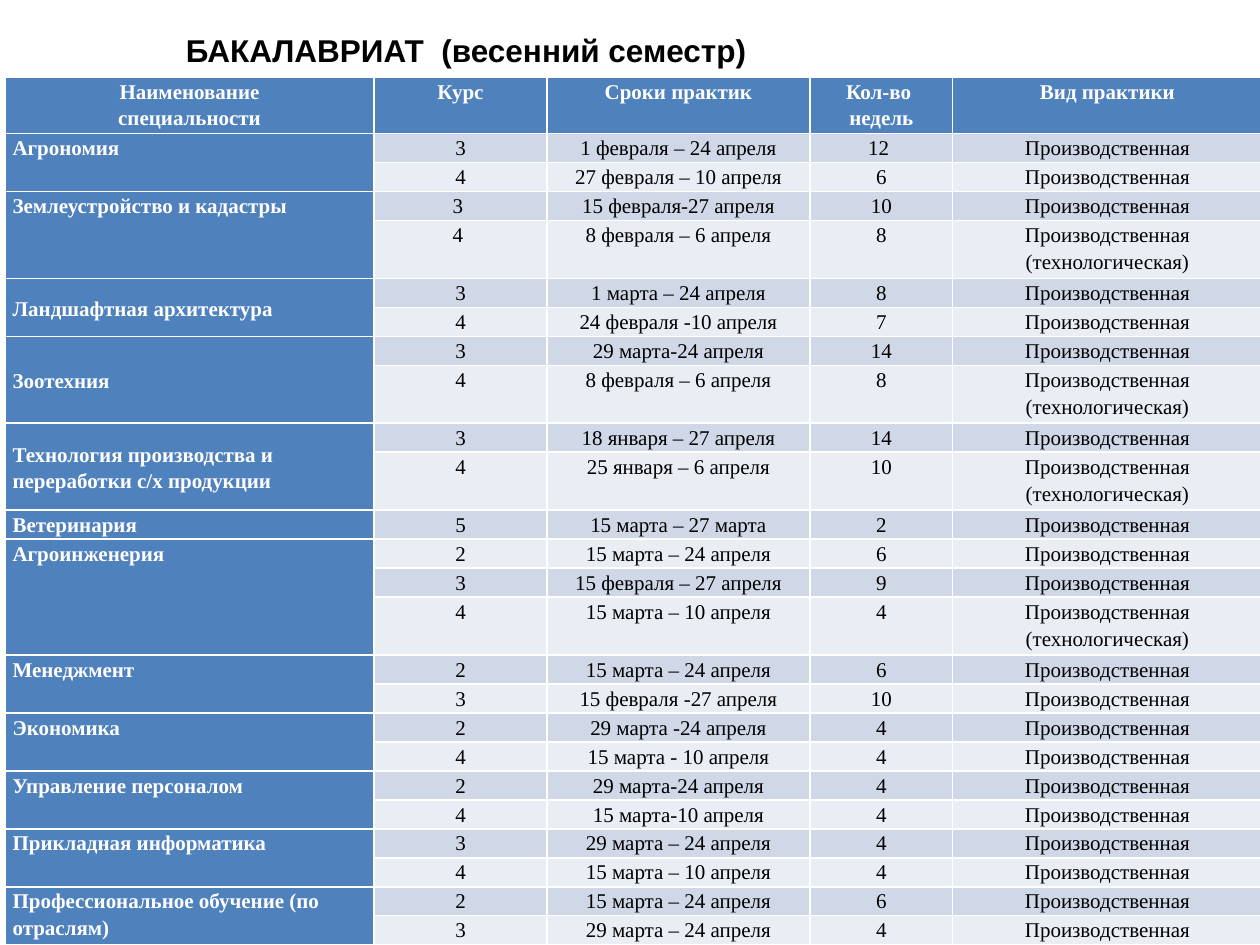
from typing import NamedTuple

from pptx import Presentation
from pptx.dml.color import RGBColor
from pptx.enum.text import MSO_ANCHOR, PP_ALIGN
from pptx.util import Inches, Pt

CENTER, LEFT = PP_ALIGN.CENTER, PP_ALIGN.LEFT
TOP, MIDDLE = MSO_ANCHOR.TOP, MSO_ANCHOR.MIDDLE

COLORS = {
    "heading": "4F81BD",
    "odd_row": "D0D8E8",
    "even_row": "E9EDF4",
    "light_text": "FFFFFF",
    "dark_text": "000000",
}
SLIDE_WIDTH, SLIDE_HEIGHT = Inches(10), Inches(7.5)
COLUMN_SHARES = (0.293, 0.137, 0.209, 0.113, 0.246)
HEADER_HEIGHT = Inches(0.45)
LINE_HEIGHT = Inches(0.23)

HEADERS = ("Наименование\nспециальности", "Курс", "Сроки практик",
           "Кол-во \nнедель", "Вид практики")
FIELD = "Производственная"
TECHNOLOGICAL = "Производственная (технологическая)"


class Practice(NamedTuple):
    course: str
    dates: str
    weeks: str
    kind: str = FIELD


class Specialty(NamedTuple):
    name: str
    practices: tuple[Practice, ...]
    anchor: MSO_ANCHOR = TOP


SPECIALTIES = (
    Specialty("Агрономия", (
        Practice("3", "1 февраля – 24 апреля", "12 "),
        Practice("4", "27 февраля – 10 апреля", "6"))),
    Specialty("Землеустройство и кадастры", (
        Practice("3 ", "15 февраля-27 апреля", "10"),
        Practice("4 ", "8 февраля – 6 апреля", "8", TECHNOLOGICAL))),
    Specialty("Ландшафтная архитектура", (
        Practice("3", "1 марта – 24 апреля", "8"),
        Practice("4", "24 февраля -10 апреля", "7")), MIDDLE),
    Specialty("Зоотехния", (
        Practice("3", "29 марта-24 апреля", "14"),
        Practice("4", "8 февраля – 6 апреля", "8", TECHNOLOGICAL)), MIDDLE),
    Specialty("Технология производства и переработки с/х продукции", (
        Practice("3", "18 января – 27 апреля", "14"),
        Practice("4", "25 января – 6 апреля", "10", TECHNOLOGICAL)), MIDDLE),
    Specialty("Ветеринария", (
        Practice("5", "15 марта – 27 марта", "2"),)),
    Specialty("Агроинженерия", (
        Practice("2", "15 марта – 24 апреля", "6"),
        Practice("3", "15 февраля – 27 апреля", "9"),
        Practice("4", "15 марта – 10 апреля", "4", TECHNOLOGICAL))),
    Specialty("Менеджмент", (
        Practice("2", "15 марта – 24 апреля", "6"),
        Practice("3", "15 февраля -27 апреля", "10"))),
    Specialty("Экономика", (
        Practice("2", "29 марта -24 апреля", "4"),
        Practice("4", "15 марта - 10 апреля", "4"))),
    Specialty("Управление персоналом", (
        Practice("2", "29 марта-24 апреля", "4"),
        Practice("4", "15 марта-10 апреля", "4"))),
    Specialty("Прикладная информатика", (
        Practice("3", "29 марта – 24 апреля", "4"),
        Practice("4", "15 марта – 10 апреля", "4"))),
    Specialty("Профессиональное обучение (по отраслям)", (
        Practice("2", "15 марта – 24 апреля", "6"),
        Practice("3", "29 марта – 24 апреля", "4"))),
)


def style_font(font, name: str, size: int, color: str, bold: bool) -> None:
    font.name, font.size, font.bold = name, Pt(size), bold
    font.color.rgb = RGBColor.from_string(COLORS[color])


def fill_cell(cell, text: str, fill: str, align: PP_ALIGN = CENTER,
              anchor: MSO_ANCHOR = TOP) -> None:
    """Write a cell; heading cells get bold light text."""
    is_heading = fill == "heading"
    cell.fill.solid()
    cell.fill.fore_color.rgb = RGBColor.from_string(COLORS[fill])
    cell.margin_left = cell.margin_right = Inches(0.06)
    cell.margin_top = cell.margin_bottom = 0
    cell.vertical_anchor = anchor
    cell.text_frame.text = text
    for paragraph in cell.text_frame.paragraphs:
        paragraph.alignment = align
        paragraph.line_spacing = 1.15
        for run in paragraph.runs:
            style_font(run.font, "Times New Roman", 12,
                       "light_text" if is_heading else "dark_text", is_heading)


def add_title(slide, text: str) -> None:
    box = slide.shapes.add_textbox(Inches(0.59), Inches(0.2),
                                   Inches(6.22), Inches(0.4))
    frame = box.text_frame
    frame.word_wrap = True
    frame.vertical_anchor = MIDDLE
    frame.text = text
    title = frame.paragraphs[0]
    title.alignment = CENTER
    style_font(title.runs[0].font, "Arial", 18, "dark_text", True)


def add_schedule(slide, specialties: tuple[Specialty, ...]) -> None:
    row_count = 1 + sum(len(specialty.practices) for specialty in specialties)
    table = slide.shapes.add_table(
        row_count, len(HEADERS), Inches(0.04), Inches(0.61),
        int(SLIDE_WIDTH * sum(COLUMN_SHARES)), LINE_HEIGHT * row_count).table
    table.first_col = True
    for column, share in zip(table.columns, COLUMN_SHARES):
        column.width = int(SLIDE_WIDTH * share)

    table.rows[0].height = HEADER_HEIGHT
    for column, header in enumerate(HEADERS):
        fill_cell(table.cell(0, column), header, "heading")

    row = 1
    for specialty in specialties:
        first_row = row
        for practice in specialty.practices:
            lines = 2 if practice.kind == TECHNOLOGICAL else 1
            table.rows[row].height = LINE_HEIGHT * lines
            band = "odd_row" if row % 2 else "even_row"
            for column, value in enumerate(practice, start=1):
                fill_cell(table.cell(row, column), value, band)
            row += 1
        name_cell = table.cell(first_row, 0)
        if row - first_row > 1:
            name_cell.merge(table.cell(row - 1, 0))
        fill_cell(name_cell, specialty.name, "heading", LEFT, specialty.anchor)


def main() -> None:
    presentation = Presentation()
    presentation.slide_width = SLIDE_WIDTH
    presentation.slide_height = SLIDE_HEIGHT
    slide = presentation.slides.add_slide(presentation.slide_layouts[6])
    add_schedule(slide, SPECIALTIES)
    add_title(slide, "БАКАЛАВРИАТ  (весенний семестр)")
    presentation.save("out.pptx")


if __name__ == "__main__":
    main()
